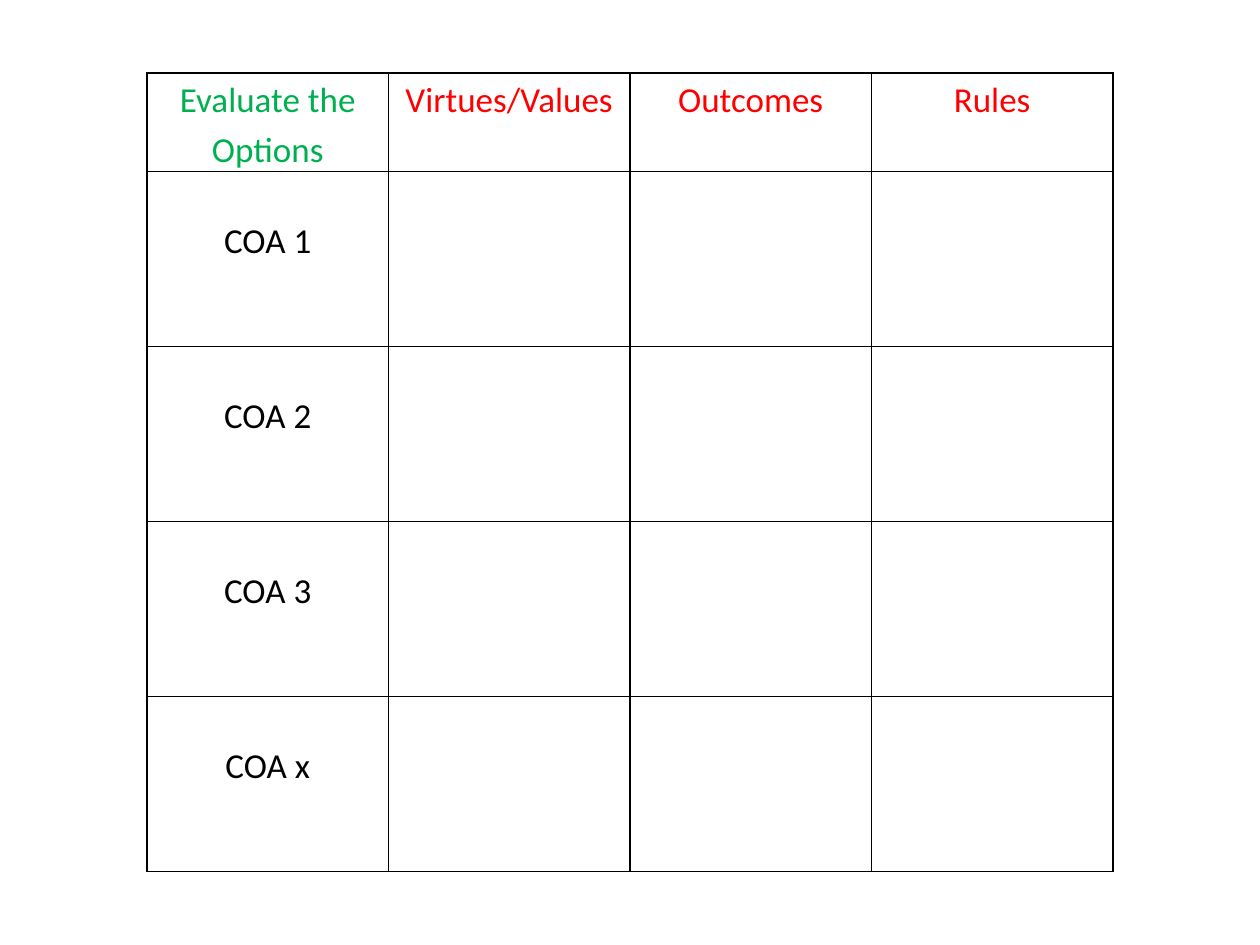
"""Build a slide with a blank grid for weighing options against three tests."""
from lxml.etree import SubElement as Sub
from pptx import Presentation
from pptx.dml.color import RGBColor as RGB
from pptx.enum.text import PP_ALIGN as Align
from pptx.oxml.ns import qn
from pptx.util import Pt

HEADS = ["Evaluate the Options", "Virtues/Values", "Outcomes", "Rules"]
ROWS = ["COA 1", "COA 2", "COA 3", "COA x"]

GREEN = RGB(0x00, 0xB0, 0x50)
RED = RGB(0xFF, 0x00, 0x00)
BLACK = RGB(0x00, 0x00, 0x00)

LEFT, TOP, WIDTH = 147, 73, 966
HEAD_H, ROW_H = 98, 175
PAD, DROP = 6, 42


def px(n):
    return round(n * 914400 / 126)


def frame(cell):
    props = cell._tc.get_or_add_tcPr()
    for side in ("lnL", "lnR", "lnT", "lnB"):
        line = Sub(props, qn(f"a:{side}"), w=str(Pt(1)))
        fill = Sub(line, qn("a:solidFill"))
        Sub(fill, qn("a:srgbClr"), val=str(BLACK))
    cell.fill.background()
    cell.margin_left = cell.margin_right = px(PAD)
    cell.margin_top = cell.margin_bottom = 0


def write(cell, text, color):
    cell.text_frame.text = text
    para = cell.text_frame.paragraphs[0]
    para.alignment = Align.CENTER
    para.line_spacing = 1.15
    font = para.runs[0].font
    font.name, font.size, font.bold = "Calibri", Pt(20), False
    font.color.rgb = color


def main():
    deck = Presentation()
    deck.slide_width, deck.slide_height = px(1260), px(945)
    slide = deck.slides.add_slide(deck.slide_layouts[6])
    high = HEAD_H + ROW_H * len(ROWS)
    grid = slide.shapes.add_table(
        len(ROWS) + 1, len(HEADS), px(LEFT), px(TOP), px(WIDTH), px(high)
    ).table
    grid.first_row = grid.horz_banding = False
    for col in grid.columns:
        col.width = px(WIDTH / len(HEADS))
    for i, row in enumerate(grid.rows):
        row.height = px(ROW_H if i else HEAD_H)
    for cell in grid.iter_cells():
        frame(cell)
    for i, text in enumerate(HEADS):
        write(grid.cell(0, i), text, RED if i else GREEN)
    for i, text in enumerate(ROWS, 1):
        cell = grid.cell(i, 0)
        write(cell, text, BLACK)
        cell.margin_top = px(DROP)
    deck.save("out.pptx")


if __name__ == "__main__":
    main()
